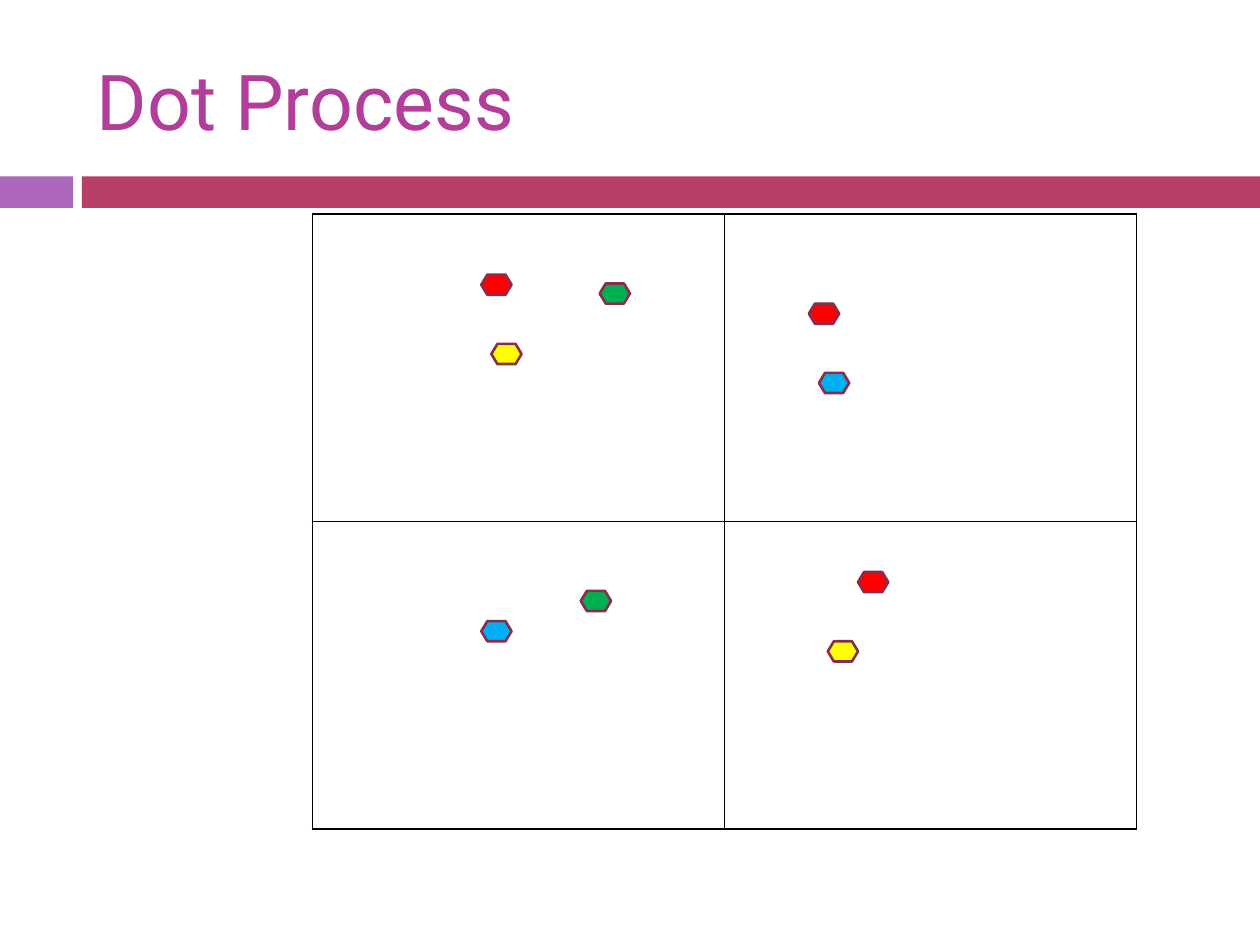
from lxml import etree
from pptx import Presentation
from pptx.dml.color import RGBColor
from pptx.enum.shapes import MSO_SHAPE
from pptx.enum.text import MSO_ANCHOR
from pptx.oxml.ns import qn
from pptx.util import Inches, Pt

RECT = MSO_SHAPE.RECTANGLE
HEXAGON = MSO_SHAPE.FLOWCHART_PREPARATION
MIDDLE = MSO_ANCHOR.MIDDLE

RED, YELLOW, GREEN, BLUE = "FF0000", "FFFF00", "00B050", "00B0F0"
DOT_LINE = "882D4D"
DOTS = [
    (3.82, 2.18, RED), (3.9, 2.73, YELLOW), (4.76, 2.25, GREEN),
    (3.82, 4.93, BLUE), (6.81, 4.54, RED), (6.42, 2.41, RED),
    (6.57, 5.09, YELLOW), (4.61, 4.69, GREEN), (6.5, 2.96, BLUE),
]


def color(value):
    """Turn a hex string into a colour."""
    return RGBColor.from_string(value)


def add_text(s, text, x, y, w, h, *, size, font, fill, anchor):
    """Add a wrapped text box with one formatted run."""
    tf = s.shapes.add_textbox(Inches(x), Inches(y), Inches(w), Inches(h)).text_frame
    tf.word_wrap = True
    tf.vertical_anchor = anchor
    r = tf.paragraphs[0].add_run()
    r.text = text
    r.font.size = Pt(size)
    r.font.name = font
    r.font.color.rgb = color(fill)


def add_shape(s, kind, x, y, w, h, fill, line=None):
    """Add a filled preset shape, outlined if a line colour is given."""
    sp = s.shapes.add_shape(kind, Inches(x), Inches(y), Inches(w), Inches(h))
    sp.shadow.inherit = False
    sp.fill.solid()
    sp.fill.fore_color.rgb = color(fill)
    if line:
        sp.line.color.rgb = color(line)
        sp.line.width = Pt(1.5)
    else:
        sp.line.fill.background()


def set_borders(cell, line, width):
    """Draw all four borders of a table cell."""
    tc_pr = cell._tc.get_or_add_tcPr()
    for i, side in enumerate(("a:lnL", "a:lnR", "a:lnT", "a:lnB")):
        ln = etree.Element(qn(side), w=str(Pt(width)))
        fill = etree.SubElement(ln, qn("a:solidFill"))
        etree.SubElement(fill, qn("a:srgbClr"), val=line)
        tc_pr.insert(i, ln)


def add_grid(s, x, y, w, h, rows, cols):
    """Add an empty white table with black borders."""
    table = s.shapes.add_table(
        rows, cols, Inches(x), Inches(y), Inches(w), Inches(h)).table
    table.first_row = False
    table.horz_banding = False
    for cell in table.iter_cells():
        cell.fill.solid()
        cell.fill.fore_color.rgb = color("FFFFFF")
        set_borders(cell, "000000", 1)


def main():
    """Build the slide and save it."""
    prs = Presentation()
    prs.slide_width, prs.slide_height = Inches(10), Inches(7.5)
    s = prs.slides.add_slide(prs.slide_layouts[6])
    add_shape(s, RECT, 0, 1.4, 0.58, 0.25, "AC66BB")
    add_shape(s, RECT, 0.65, 1.4, 9.35, 0.25, "B83D68")
    add_text(s, "Dot Process", 0.67, 0.25, 8.92, 1.08,
             size=44, font="Roboto", fill="B13F9A", anchor=MIDDLE)
    add_grid(s, 2.48, 1.7, 6.54, 4.88, rows=2, cols=2)
    for x, y, fill in DOTS:
        add_shape(s, HEXAGON, x, y, 0.24, 0.16, fill, DOT_LINE)
    prs.save("out.pptx")


if __name__ == "__main__":
    main()
